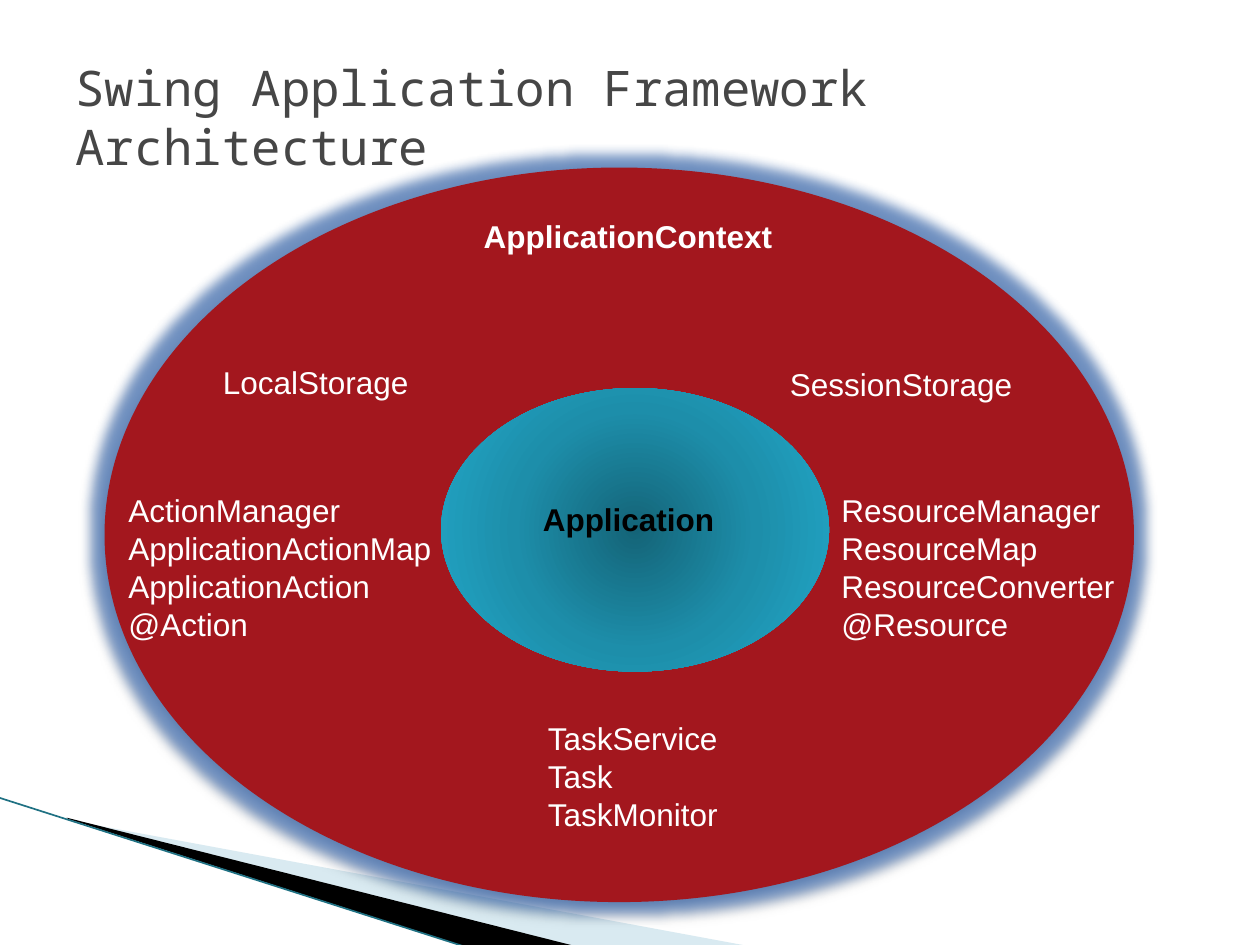
from lxml import etree
from pptx import Presentation
from pptx.dml.color import RGBColor
from pptx.enum.shapes import MSO_CONNECTOR as CONN, MSO_SHAPE as SHAPE
from pptx.enum.text import MSO_ANCHOR as ANCHOR, MSO_AUTO_SIZE as AUTOSIZE, PP_ALIGN as ALIGN
from pptx.oxml import parse_xml
from pptx.oxml.ns import nsdecls, qn
from pptx.util import Emu, Pt

PX = 9144  # EMU per px, 100 px to the inch
COLORS = {
    "title": "464646", "white": "FFFFFF", "black": "000000",
    "context": "A3171E", "glow": "2F65B5", "wedge": "A0CBDC", "edge": "1F7183",
    "core_dark": "146478", "core_mid": "1D8EAA", "core_light": "22A9CA",
}


def px(*values):
    return [Emu(v * PX) for v in values]


def rgb(name):
    return RGBColor.from_string(COLORS[name])


def write(tf, text, size=18, font="Arial", color="white", bold=False, align=ALIGN.LEFT):
    """Put each line of text in its own paragraph, all in one format."""
    for i, line in enumerate(text.split("\n")):
        p = tf.paragraphs[0] if i == 0 else tf.add_paragraph()
        p.alignment = align
        r = p.add_run()
        r.text = line
        r.font.name, r.font.size, r.font.bold = font, Pt(size), bold
        r.font.color.rgb = rgb(color)


class Deck:
    def __init__(self, width, height):
        self.prs = Presentation()
        self.prs.slide_width, self.prs.slide_height = px(width, height)
        self.s = self.prs.slides.add_slide(self.prs.slide_layouts[5])

    def title(self, text, *box):
        sp = self.s.shapes.title
        sp.left, sp.top, sp.width, sp.height = px(*box)
        tf = sp.text_frame
        tf.word_wrap, tf.auto_size = True, AUTOSIZE.NONE
        tf.vertical_anchor = ANCHOR.MIDDLE
        write(tf, text, size=28, font="Noto Sans Mono", color="title")

    def polygon(self, points, color, alpha=100):
        fb = self.s.shapes.build_freeform(*points[0], scale=PX)
        fb.add_line_segments(points[1:], close=True)
        sp = fb.convert_to_shape()
        self.paint(sp, color)
        if alpha < 100:
            clr = sp.fill._xPr.find(qn("a:solidFill"))[0]
            etree.SubElement(clr, qn("a:alpha")).set("val", str(alpha * 1000))

    def line(self, x1, y1, x2, y2, color, width):
        c = self.s.shapes.add_connector(CONN.STRAIGHT, *px(x1, y1, x2, y2))
        c.line.color.rgb, c.line.width = rgb(color), Pt(width)
        etree.SubElement(c._element.spPr, qn("a:effectLst"))

    def ellipse(self, box, color):
        sp = self.s.shapes.add_shape(SHAPE.OVAL, *px(*box))
        self.paint(sp, color)
        return sp

    def label(self, text, box, wrap=True, **fmt):
        tf = self.s.shapes.add_textbox(*px(*box)).text_frame
        tf.word_wrap, tf.auto_size = wrap, AUTOSIZE.SHAPE_TO_FIT_TEXT
        write(tf, text, **fmt)

    def paint(self, sp, color):
        sp.shadow.inherit = False
        sp.fill.solid()
        sp.fill.fore_color.rgb = rgb(color)
        sp.line.fill.background()

    def glow(self, sp, color, radius, alpha):
        effects = sp._element.spPr.find(qn("a:effectLst"))
        effects.append(parse_xml(
            f'<a:glow {nsdecls("a")} rad="{radius * PX}"><a:srgbClr val="{COLORS[color]}">'
            f'<a:alpha val="{alpha * 1000}"/></a:srgbClr></a:glow>'))
        effects.append(parse_xml(
            f'<a:outerShdw {nsdecls("a")} blurRad="{Pt(3.5)}" dist="{Pt(2.2)}" dir="5400000" '
            'rotWithShape="0"><a:srgbClr val="000000"><a:alpha val="32000"/></a:srgbClr></a:outerShdw>'))

    def radial(self, sp, stops):
        gs = "".join(f'<a:gs pos="{pos * 1000}"><a:srgbClr val="{COLORS[c]}"/></a:gs>' for pos, c in stops)
        spPr = sp._element.spPr
        spPr.replace(spPr.find(qn("a:solidFill")), parse_xml(
            f'<a:gradFill {nsdecls("a")} rotWithShape="1"><a:gsLst>{gs}</a:gsLst><a:path path="circle">'
            '<a:fillToRect l="50000" t="50000" r="50000" b="50000"/></a:path></a:gradFill>'))


def main():
    deck = Deck(1000, 750)

    # Corner decoration
    deck.polygon([(55, 651), (595, 751), (456, 751), (55, 650)], "wedge", alpha=40)
    deck.polygon([(53, 649), (457, 751), (372, 752), (54, 650)], "black")
    deck.line(-1, 633, 371, 752, "edge", 0.95)

    deck.title("Swing Application Framework Architecture", 50, 30, 900, 125)

    # Context ring with the application at its core
    context = deck.ellipse((83, 133, 817, 583), "context")
    deck.glow(context, "glow", radius=18, alpha=60)
    core = deck.ellipse((350, 308, 308, 225), "core_mid")
    deck.radial(core, [(0, "core_dark"), (50, "core_mid"), (100, "core_light")])
    deck.label("Application", (421, 392, 158, 40), wrap=False, color="black", bold=True)
    deck.label("ApplicationContext", (374, 167, 252, 40), wrap=False, bold=True)

    # Services held by the context
    services = [
        ("ResourceManager\nResourceMap\nResourceConverter\n@Resource", (658, 385, 250, 131)),
        ("ActionManager\nApplicationActionMap\nApplicationAction\n@Action", (92, 385, 292, 131)),
        ("TaskService\nTask\nTaskMonitor", (425, 566, 250, 101)),
        ("SessionStorage", (617, 285, 208, 40)),
        ("LocalStorage", (167, 283, 208, 40)),
    ]
    for text, box in services:
        deck.label(text, box)

    deck.prs.save("out.pptx")


if __name__ == "__main__":
    main()
